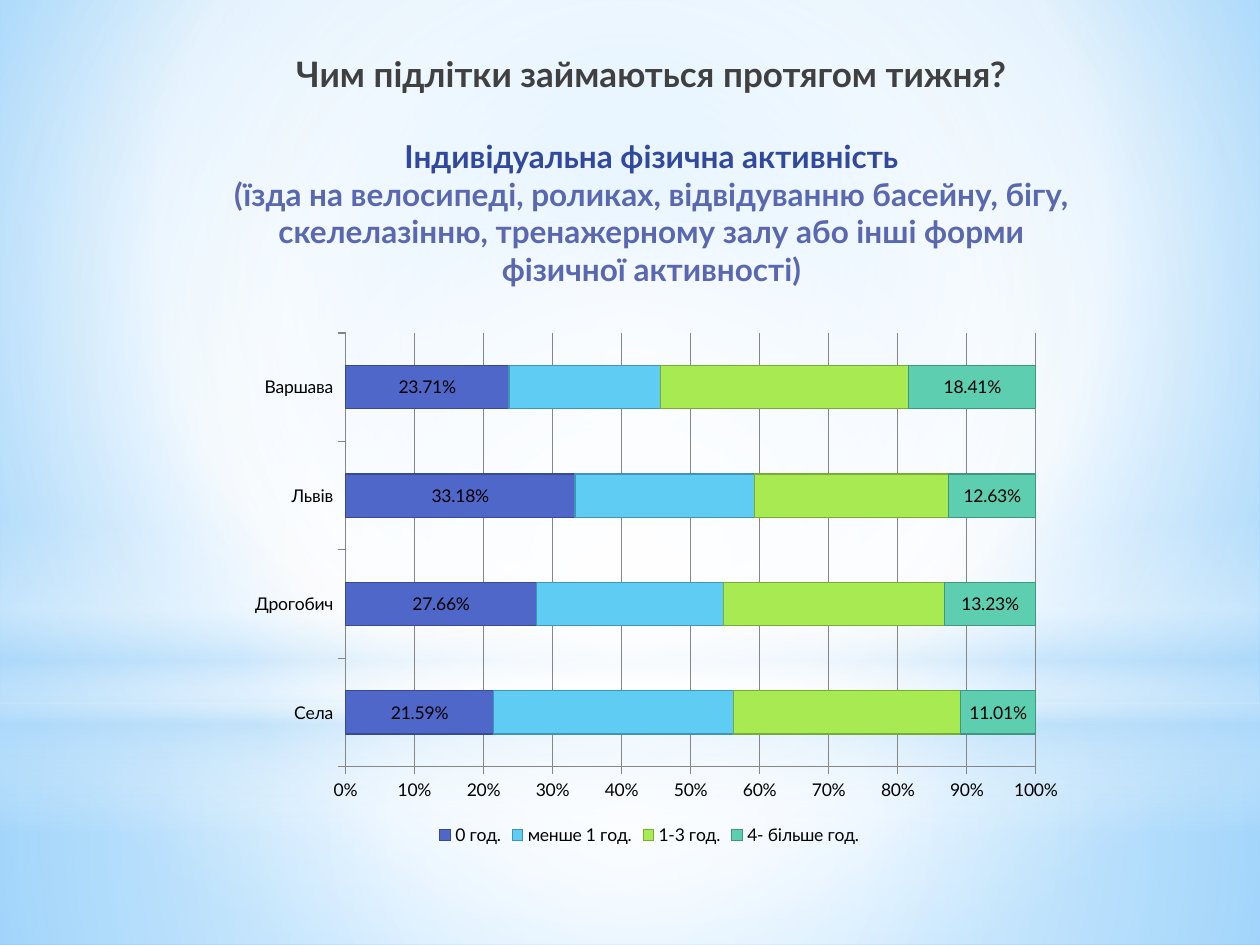
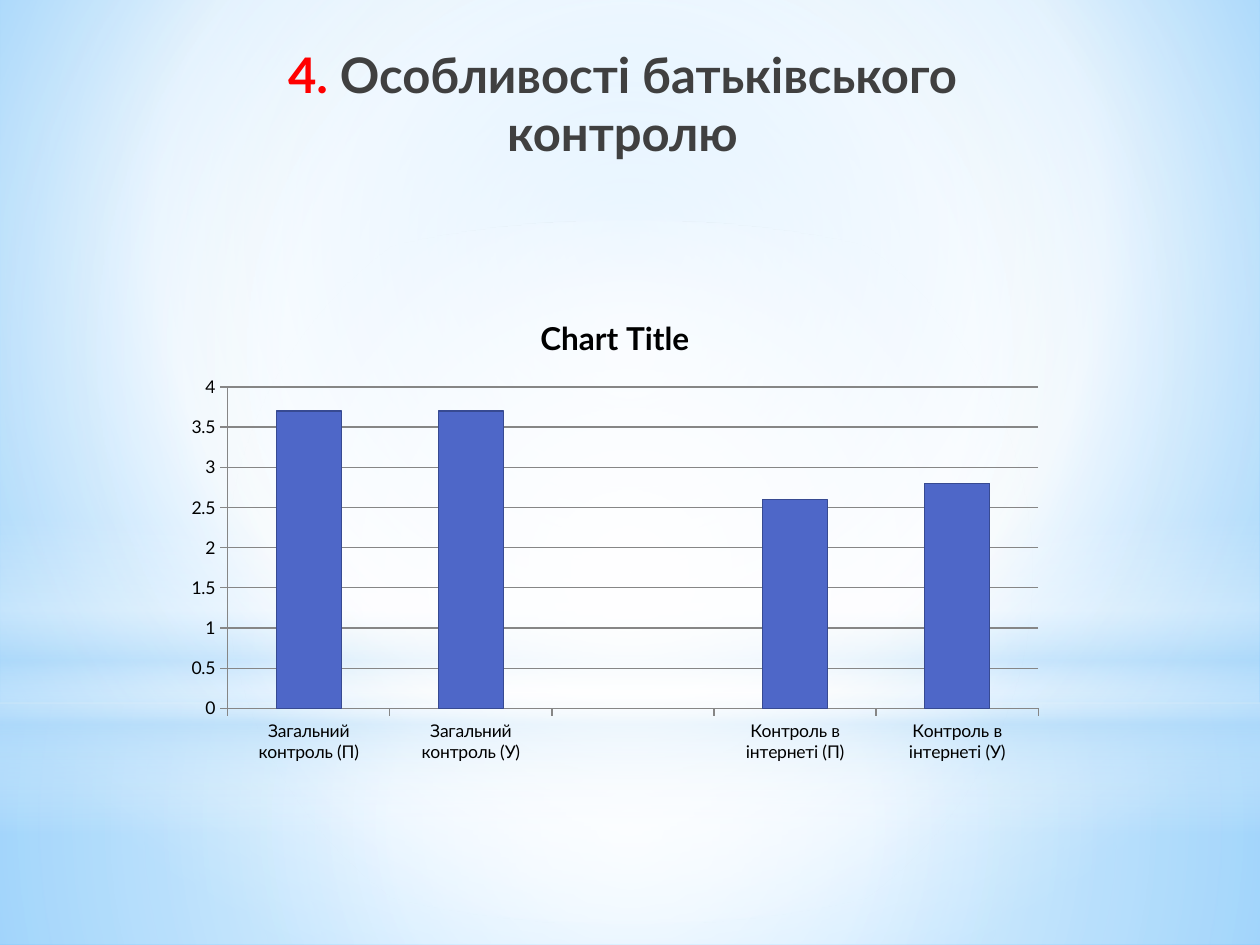
from lxml.etree import SubElement
from pptx import Presentation
from pptx.chart.data import CategoryChartData
from pptx.dml.color import RGBColor
from pptx.enum.chart import XL_CHART_TYPE as CT, XL_LABEL_POSITION as LP
from pptx.enum.chart import XL_LEGEND_POSITION as LG, XL_TICK_MARK as TM
from pptx.enum.shapes import MSO_SHAPE as MS
from pptx.enum.text import PP_ALIGN as AL
from pptx.oxml.ns import qn
from pptx.util import Inches, Pt

FONT = "Lato"
BLACK, DARK, RED, GRID = "000000", "404040", "FF0000", "868686"
BLUE, SKY, LIME, MINT = "4E67C8", "5ECCF3", "A7EA52", "5DCEAF"
WHITE, HAZE = "FFFFFF", "B4DCFA"
EDGES = {BLUE: "374A92", SKY: "4295B2", LIME: "79AB39", MINT: "42967F"}
CENTER = (50, 50, 50, 50)
BACKGROUND = [(0, "9ED5FF", 100), (60, WHITE, 100), (100, "5BB9FF", 100)]
BANDS = [
    (MS.RECTANGLE, (0, 5.58, 10, 1.92), CENTER,
     [(0, WHITE, 91), (37, WHITE, 76), (100, HAZE, 79)]),
    (MS.RECTANGLE, (0, 0, 10, 5.58), CENTER,
     [(0, WHITE, 89), (48, WHITE, 62), (100, HAZE, 79)]),
    (MS.RECTANGLE, (0, 4.12, 10, 2.5), None,
     [(0, WHITE, 0), (29, WHITE, 30), (45, HAZE, 40),
      (55, WHITE, 26), (65, HAZE, 60), (100, WHITE, 0)]),
    (MS.OVAL, (0, 1.75, 10, 5.58), CENTER, [(0, WHITE, 100), (56, WHITE, 0)]),
]


def rgb(color):
    return RGBColor.from_string(color)


def inches(box):
    return [Inches(v) for v in box]


def set_font(font, color, **formats):
    font.color.rgb = rgb(color)
    for name, value in {"name": FONT, **formats}.items():
        setattr(font, name, value)


def set_gradient(parent, stops, focus):
    solid = parent.find(qn("a:solidFill"))
    grad = solid.makeelement(qn("a:gradFill"), {"rotWithShape": "1"})
    parent.replace(solid, grad)
    gs_list = SubElement(grad, qn("a:gsLst"))
    for pos, color, alpha in stops:
        gs = SubElement(gs_list, qn("a:gs"), pos=str(pos * 1000))
        clr = SubElement(gs, qn("a:srgbClr"), val=color)
        if alpha < 100:
            SubElement(clr, qn("a:alpha"), val=str(alpha * 1000))
    if focus:
        radial = SubElement(grad, qn("a:path"), {"path": "circle"})
        sides = {k: str(v * 1000) for k, v in zip("ltrb", focus)}
        SubElement(radial, qn("a:fillToRect"), sides)
    else:
        SubElement(grad, qn("a:lin"), ang="5400000", scaled="1")


def add_base_slide(prs):
    s = prs.slides.add_slide(prs.slide_layouts[6])
    s.background.fill.solid()
    s.background.fill.fore_color.rgb = rgb(WHITE)
    set_gradient(next(s.element.iter(qn("p:bgPr"))), BACKGROUND, (20, 10, 20, 60))
    for shape, box, focus, stops in BANDS:
        sp = s.shapes.add_shape(shape, *inches(box))
        sp.shadow.inherit = False
        sp.line.fill.background()
        sp.fill.solid()
        sp.fill.fore_color.rgb = rgb(WHITE)
        set_gradient(sp.element.spPr, stops, focus)
    return s


def add_title(s, box, paragraphs):
    tf = s.shapes.add_textbox(*inches(box)).text_frame
    tf.word_wrap = True
    for i, (space_after, runs) in enumerate(paragraphs):
        p = tf.paragraphs[0] if i == 0 else tf.add_paragraph()
        p.alignment, p.space_after = AL.CENTER, Pt(space_after)
        for text, size, color in runs:
            r = p.add_run()
            r.text = text
            set_font(r.font, color, size=Pt(size), bold=True)


def add_bar_chart(s, box, kind, cats, series, axis_format):
    data = CategoryChartData()
    data.categories = cats
    for name, values, _ in series:
        data.add_series(name, values)
    chart = s.shapes.add_chart(kind, *inches(box), data).chart
    set_font(chart.font, BLACK, size=Pt(10))
    chart.has_legend = chart.has_title = False
    plot = chart.plots[0]
    plot.gap_width, plot.vary_by_categories = 150, False
    for ser, (_, _, color) in zip(plot.series, series):
        ser.format.fill.solid()
        ser.format.fill.fore_color.rgb = rgb(color)
        ser.format.line.color.rgb = rgb(EDGES[color])
        ser.format.line.width = Pt(0.75)
        ser.invert_if_negative = False
    value_axis = chart.value_axis
    value_axis.has_major_gridlines = True
    value_axis.tick_labels.number_format = axis_format
    value_axis.tick_labels.number_format_is_linked = False
    for axis in (chart.category_axis, value_axis):
        axis.major_tick_mark = TM.OUTSIDE
        axis.format.line.color.rgb = rgb(GRID)
    value_axis.major_gridlines.format.line.color.rgb = rgb(GRID)
    return chart


def place_plot(chart, **position):
    area = chart.plots[0]._element.getparent()
    layout = area.find(qn("c:layout"))
    if layout is None:
        layout = area.makeelement(qn("c:layout"), {})
        area.insert(0, layout)
    manual = SubElement(layout, qn("c:manualLayout"))
    settings = {"layoutTarget": "inner", "xMode": "edge", "yMode": "edge", **position}
    for name, value in settings.items():
        SubElement(manual, qn(f"c:{name}"), val=str(value))


def add_activity_slide(prs):
    s = add_base_slide(prs)
    add_title(s, (1.61, 0.37, 7.12, 2.0), [
        (24, [("Чим підлітки займаються протягом тижня?", 20, DARK)]),
        (0, [("Індивідуальна фізична активність", 18, "31489F")]),
        (0, [("(їзда на велосипеді, роликах, відвідуванню басейну, бігу, "
              "скелелазінню, тренажерному залу або інші форми "
              "фізичної активності)", 18, "5968B0")]),
    ])
    series = [
        ("0 год.", (0.2159, 0.2766, 0.3318, 0.2371), BLUE),
        ("менше 1 год.", (0.35, 0.27, 0.26, 0.22), SKY),
        ("1-3 год.", (0.33, 0.32, 0.28, 0.36), LIME),
        ("4- більше год.", (0.1101, 0.1323, 0.1263, 0.1841), MINT),
    ]
    chart = add_bar_chart(s, (1.85, 2.49, 6.61, 4.26), CT.BAR_STACKED_100,
                          ("Села", "Дрогобич", "Львів", "Варшава"), series, "0%")
    place_plot(chart, x=0.135, y=0.036, w=0.829, h=0.808)
    plot = chart.plots[0]
    plot.overlap = 100
    for ser in (plot.series[0], plot.series[-1]):
        labels = ser.data_labels
        formats = {"show_value": True, "number_format": "0.00%",
                   "number_format_is_linked": False, "position": LP.CENTER}
        for name, value in formats.items():
            setattr(labels, name, value)
    chart.has_legend = True
    chart.legend.position = LG.BOTTOM
    chart.legend.include_in_layout = False


def add_control_slide(prs):
    s = add_base_slide(prs)
    cats = ("Загальний контроль (П)", "Загальний контроль (У)", "",
            "Контроль в інтернеті (П)", "Контроль в інтернеті (У)")
    series = [("Series 1", (3.7, 3.7, None, 2.6, 2.8), BLUE)]
    chart = add_bar_chart(s, (1.38, 2.33, 7, 3.8), CT.COLUMN_CLUSTERED,
                          cats, series, "General")
    chart.has_title = True
    tf = chart.chart_title.text_frame
    tf.text = "Chart Title"
    set_font(tf.paragraphs[0].runs[0].font, BLACK, size=Pt(18), bold=True)
    add_title(s, (1.38, 0.3, 7.12, 1.25), [
        (3, [("4.", 28, RED), (" Особливості батьківського контролю", 28, DARK)]),
    ])


def main():
    prs = Presentation()
    prs.slide_width, prs.slide_height = Inches(10), Inches(7.5)
    add_activity_slide(prs)
    add_control_slide(prs)
    prs.save("out.pptx")


if __name__ == "__main__":
    main()
